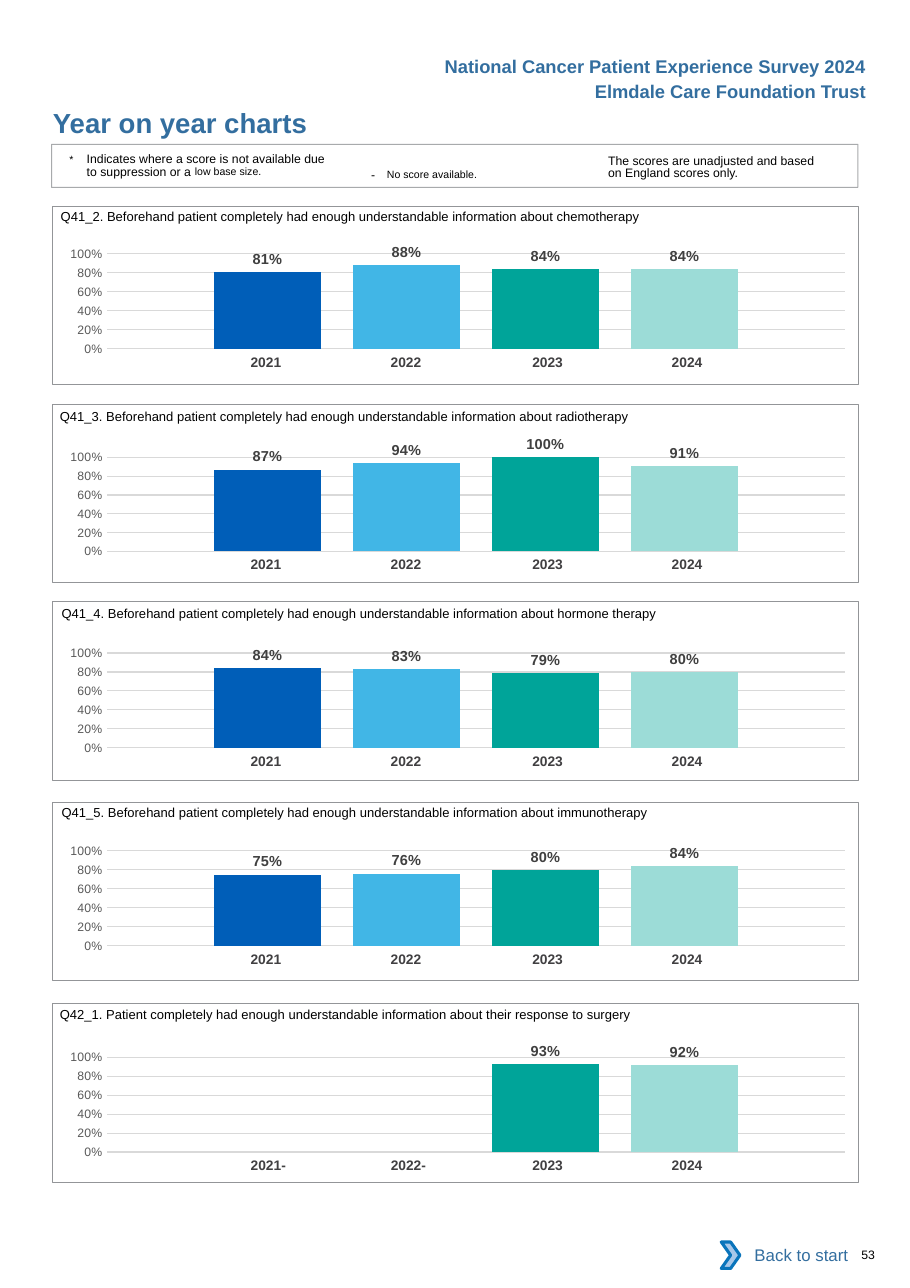
from lxml.etree import SubElement
from pptx import Presentation
from pptx.chart.data import CategoryChartData
from pptx.dml.color import RGBColor
from pptx.enum.chart import XL_CHART_TYPE, XL_LABEL_POSITION, XL_TICK_MARK
from pptx.enum.shapes import MSO_SHAPE
from pptx.enum.text import MSO_ANCHOR, PP_ALIGN
from pptx.oxml import parse_xml
from pptx.oxml.ns import nsdecls, qn
from pptx.util import Cm, Pt

COLORS = {
    "heading": "336E9F", "text": "000000", "year": "414042", "label": "404040",
    "axis": "595959", "grid": "D9D9D9", "border": "939598", "white": "FFFFFF",
    "chevron": "A8C7E9", "chevron_line": "0A74BB",
}
SERIES_COLORS = ["005EB8", "41B6E6", "00A499", "9CDCD7"]

INFO = "Beforehand patient completely had enough understandable information about "
YEARS = ["2021", "2022", "2023", "2024"]
PANELS = [
    ("Q41_2. " + INFO + "chemotherapy", YEARS, [0.81, 0.88, 0.84, 0.84],
     {"panel": 4.75, "title": 4.58, "chart": 5.38, "left": 1.4}),
    ("Q41_3. " + INFO + "radiotherapy", YEARS, [0.87, 0.94, 1, 0.91],
     {"panel": 9.32, "title": 9.19, "chart": 10.05, "left": 1.38}),
    ("Q41_4. " + INFO + "hormone therapy", YEARS, [0.84, 0.83, 0.79, 0.8],
     {"panel": 13.87, "title": 13.72, "chart": 14.58, "left": 1.42}),
    ("Q41_5. " + INFO + "immunotherapy", YEARS, [0.75, 0.76, 0.8, 0.84],
     {"panel": 18.49, "title": 18.31, "chart": 19.14, "left": 1.42}),
    ("Q42_1. Patient completely had enough understandable information about "
     "their response to surgery", ["2021-", "2022-", "2023", "2024"],
     [None, None, 0.93, 0.92],
     {"panel": 23.14, "title": 22.97, "chart": 23.9, "left": 1.38}),
]

PANEL_LEFT, PANEL_W, PANEL_H = 1.21, 18.59, 4.11
CHART_LEFT, CHART_H = 1, 3.28
YEARS_LEFT, YEARS_DROP, YEARS_H = 4.39, 2.67, 0.69
YEAR_COLS = [3.23, 3.23, 3.4, 3.23]
YEAR_RIGHT = [0, 0, 0.1, 0.3]
PLOT = {"x": 0.079, "y": 0.145, "w": 0.915, "h": 0.666}

HEADING = {"size": Pt(12), "bold": True}
NOTE = {"size": Pt(8)}
TEXTS = [
    ((9.96, 1.15, 10.26, 0.76), (0.25, 0.13), "heading", HEADING, PP_ALIGN.RIGHT, {},
     [("National Cancer Patient Experience Survey 2024", {}, 0)]),
    ((9.96, 1.72, 10.26, 0.76), (0.25, 0.13), "heading", HEADING, PP_ALIGN.RIGHT, {},
     [("Elmdale Care Foundation Trust", {}, 0)]),
    ((1.22, 2.44, 11.43, 0.76), (0, 0), "heading", {"size": Pt(18), "bold": True},
     PP_ALIGN.LEFT, {}, [("Year on year charts", {}, 0)]),
    ((1.6, 3.5, 6, 0.7), (0, 0.08), "text", NOTE, PP_ALIGN.LEFT,
     {"indent": 0.4, "spacing": 8.1},
     [("*\t", {"size": Pt(12)}, 3),
      ("Indicates where a score is not available due to suppression or a ", {}, 0),
      ("low base size.", {"size": Pt(12)}, 7)]),
    ((8.31, 3.58, 4.65, 0.61), (0.25, 0.13), "text", NOTE, PP_ALIGN.LEFT,
     {"indent": 0.36},
     [("-\t", {}, 0), ("No score available.", {"size": Pt(12)}, 3)]),
    ((14.02, 3.5, 5.1, 0.69), (0, 0.08), "text", NOTE, PP_ALIGN.LEFT, {"spacing": 8.1},
     [("The scores are unadjusted and based on England scores only.", {}, 0)]),
    ((19.86, 28.76, 1.05, 0.33), (0, 0), "text", NOTE, PP_ALIGN.LEFT, {},
     [("53", {}, 0)]),
]


def set_all(obj, values):
    for name, value in values.items():
        setattr(obj, name, value)


def set_font(font, color, values):
    set_all(font, {"name": "Arial", **values})
    font.color.rgb = RGBColor.from_string(COLORS[color])


def add_text(s, box, inset, color, fmt, align, layout, runs):
    tf = s.shapes.add_textbox(*map(Cm, box)).text_frame
    set_all(tf, {"word_wrap": True, "margin_left": Cm(inset[0]), "margin_right": Cm(inset[0]),
                 "margin_top": Cm(inset[1]), "margin_bottom": Cm(0)})
    p = tf.paragraphs[0]
    p.alignment = align
    if "spacing" in layout:
        p.line_spacing = Pt(layout["spacing"])
    indent = layout.get("indent", 0)
    pPr = p._p.get_or_add_pPr()
    pPr.set("marL", str(Cm(indent)))
    pPr.set("indent", str(-Cm(indent)))
    for words, extra, raised in runs:
        r = p.add_run()
        r.text = words
        set_font(r.font, color, {**fmt, **extra})
        if raised:
            r._r.get_or_add_rPr().set("baseline", str(raised * 1000))


def add_shape(s, kind, box, fill=None, line=None, width=0.5):
    sp = s.shapes.add_shape(kind, *map(Cm, box))
    sp.shadow.inherit = False
    for part, color in ((sp.fill, fill), (sp.line.fill, line)):
        if color:
            part.solid()
            part.fore_color.rgb = RGBColor.from_string(COLORS[color])
        else:
            part.background()
    if line:
        sp.line.width = Pt(width)
    return sp


def add_scores(s, top, scores):
    data = CategoryChartData(number_format="0%")
    data.categories = ["1"]
    for i, score in enumerate(scores, 1):
        data.add_series(f"Series {i}", [score])
    chart = s.shapes.add_chart(XL_CHART_TYPE.COLUMN_CLUSTERED, Cm(CHART_LEFT), Cm(top),
                               Cm(PANEL_W), Cm(CHART_H), data).chart
    set_all(chart, {"has_legend": False, "has_title": False})
    set_font(chart.font, "text", {"name": "Calibri", "size": Pt(10)})
    chart.category_axis.visible = False
    axis = chart.value_axis
    set_all(axis, {"minimum_scale": 0, "maximum_scale": 1, "major_unit": 0.2,
                   "major_tick_mark": XL_TICK_MARK.NONE, "minor_tick_mark": XL_TICK_MARK.NONE})
    axis.format.line.fill.background()
    set_all(axis.tick_labels, {"number_format": "0%", "number_format_is_linked": False})
    set_font(axis.tick_labels.font, "axis", {"size": Pt(8)})
    grid = axis.major_gridlines.format.line
    grid.width = Pt(0.75)
    grid.color.rgb = RGBColor.from_string(COLORS["grid"])
    plot = chart.plots[0]
    set_all(plot, {"gap_width": 200, "overlap": -30, "vary_by_categories": False})
    for series, color in zip(plot.series, SERIES_COLORS):
        series.format.fill.solid()
        series.format.fill.fore_color.rgb = RGBColor.from_string(color)
        labels = series.data_labels
        set_all(labels, {"show_value": True, "position": XL_LABEL_POSITION.OUTSIDE_END,
                         "number_format": "0%", "number_format_is_linked": False})
        set_font(labels.font, "label", {"size": Pt(9.5), "bold": True})
    area = chart._chartSpace.chart.plotArea
    for old in area.findall(qn("c:layout")):
        area.remove(old)
    modes = '<c:layoutTarget val="inner"/><c:xMode val="edge"/><c:yMode val="edge"/>'
    sizes = "".join(f'<c:{k} val="{v}"/>' for k, v in PLOT.items())
    area.insert(0, parse_xml(f'<c:layout {nsdecls("c")}><c:manualLayout>{modes}{sizes}'
                             '</c:manualLayout></c:layout>'))


def add_years(s, top, years):
    table = s.shapes.add_table(1, len(years), Cm(YEARS_LEFT), Cm(top),
                               Cm(sum(YEAR_COLS)), Cm(YEARS_H)).table
    set_all(table, {"first_row": False, "horz_banding": False})
    table._tbl.tblPr[0].text = "{2D5ABB26-0587-4C30-8999-92F81FD0307C}"
    for i, year in enumerate(years):
        table.columns[i].width = Cm(YEAR_COLS[i])
        cell = table.cell(0, i)
        cell.fill.background()
        set_all(cell, {"margin_left": Cm(0.36 if year.endswith("-") else 0.25),
                       "margin_right": Cm(YEAR_RIGHT[i]),
                       "margin_top": Cm(0.13), "margin_bottom": Cm(0.13)})
        p = cell.text_frame.paragraphs[0]
        p.alignment = PP_ALIGN.CENTER
        r = p.add_run()
        r.text = year
        set_font(r.font, "year", {"size": Pt(9), "bold": True})


def main():
    prs = Presentation()
    set_all(prs, {"slide_width": Cm(20.98), "slide_height": Cm(29.69)})
    s = prs.slides.add_slide(prs.slide_layouts[6])
    for title, years, scores, at in PANELS:
        add_scores(s, at["chart"], scores)
        add_years(s, at["chart"] + YEARS_DROP, years)
        add_shape(s, MSO_SHAPE.RECTANGLE, (PANEL_LEFT, at["panel"], PANEL_W, PANEL_H),
                  line="border")
        add_text(s, (at["left"], at["title"], 18.3, 0.61), (0, 0.23), "text",
                 {"size": Pt(8.5)}, PP_ALIGN.LEFT, {}, [(title, {}, 0)])
    notes = add_shape(s, MSO_SHAPE.RECTANGLE, (1.19, 3.33, PANEL_W, 0.99),
                      line="border", width=0.75)
    ink = notes.line.fill._xPr.find(qn("a:solidFill"))[0]
    SubElement(ink, qn("a:alpha")).set("val", "80000")
    for item in TEXTS:
        add_text(s, *item)
    back = add_shape(s, MSO_SHAPE.RECTANGLE, (16.81, 28.4, 3, 1.07), fill="white")
    tf = back.text_frame
    tf.vertical_anchor = MSO_ANCHOR.MIDDLE
    p = tf.paragraphs[0]
    p.alignment = PP_ALIGN.RIGHT
    r = p.add_run()
    r.text = "Back to start"
    set_font(r.font, "heading", {"size": Pt(11)})
    add_shape(s, MSO_SHAPE.CHEVRON, (16.63, 28.63, 0.43, 0.61),
              fill="chevron", line="chevron_line", width=2)
    prs.save("out.pptx")


if __name__ == "__main__":
    main()
